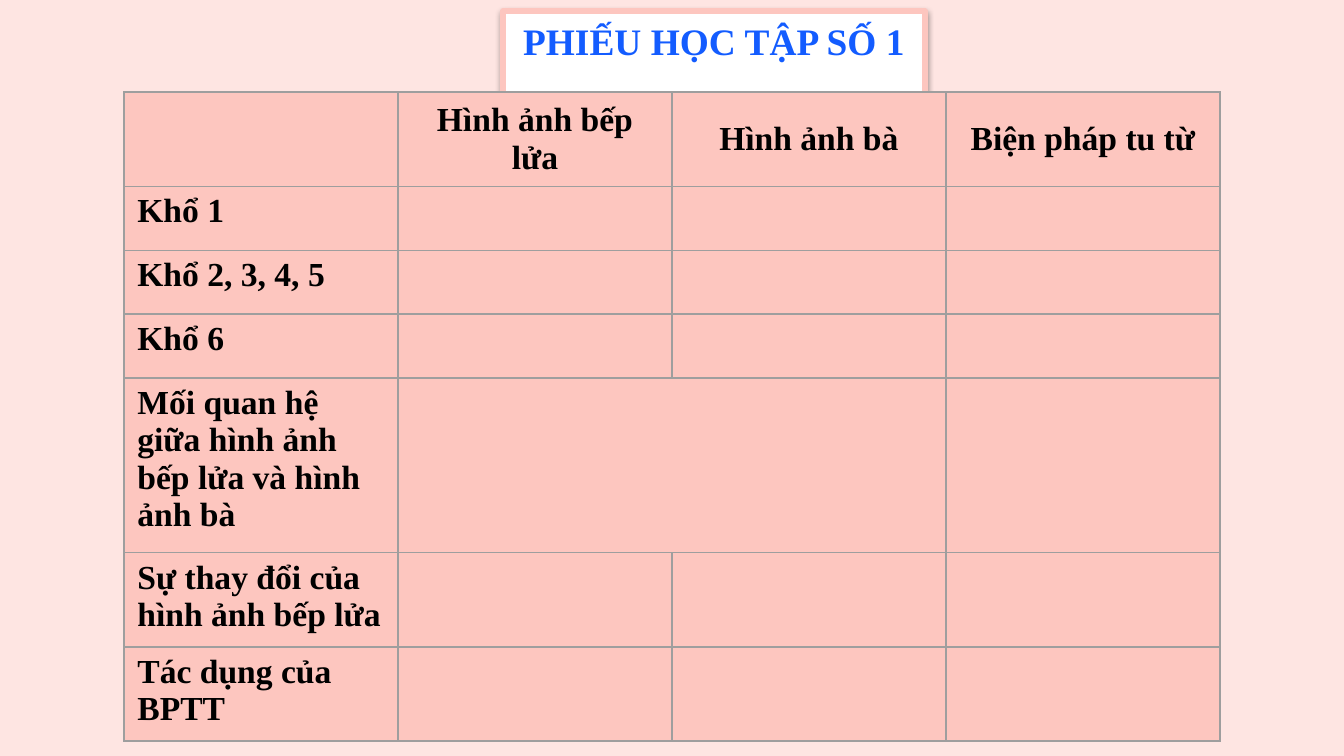
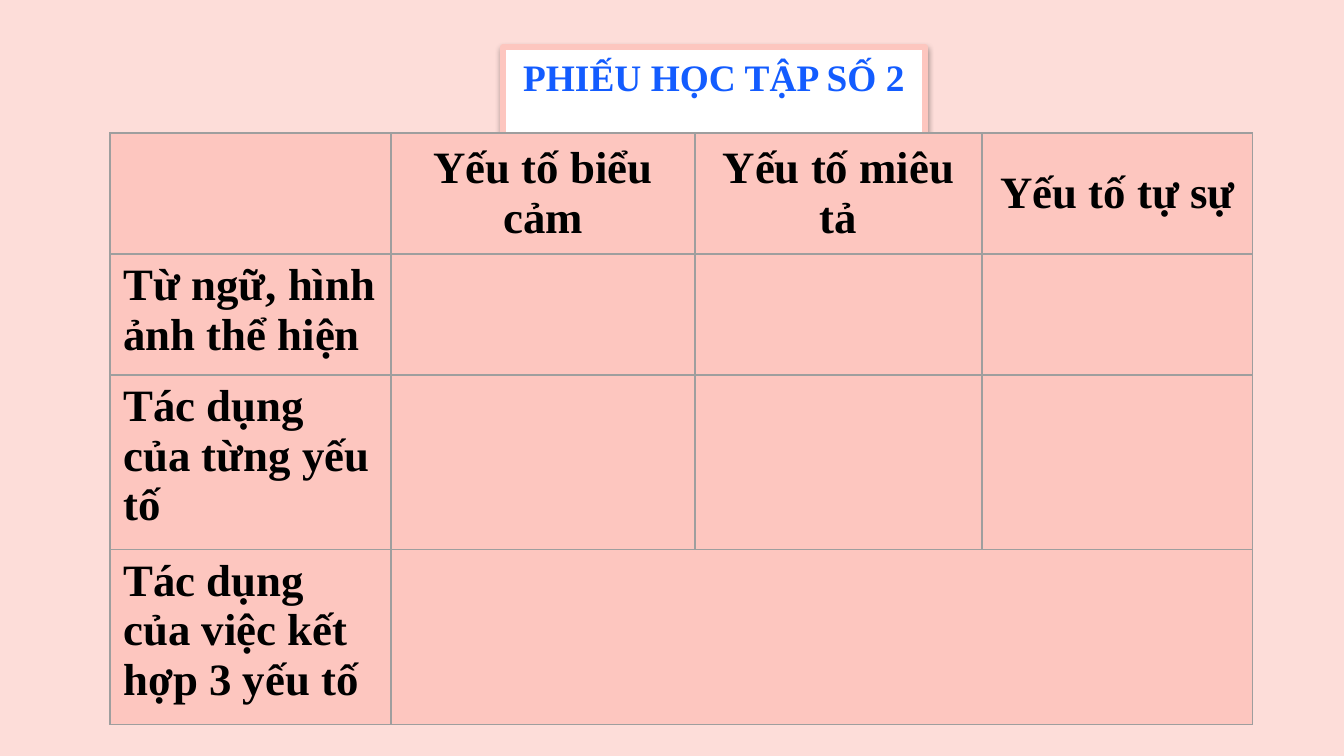
from lxml.etree import SubElement
from pptx import Presentation
from pptx.dml.color import RGBColor
from pptx.enum.text import MSO_ANCHOR, MSO_AUTO_SIZE, PP_ALIGN
from pptx.oxml.ns import qn
from pptx.util import Emu, Pt

EMU_PER_INCH = 914400
PX_PER_INCH = 134.4
FONT = "Times New Roman"
COLORS = {
    "pink": "FDC6BF",
    "white": "FFFFFF",
    "title": "135CFF",
    "text": "000000",
    "border": "9E9E9E",
    "shadow": "000000",
}
TITLE_LAYOUT = 5


def px(length):
    return Emu(round(length * EMU_PER_INCH / PX_PER_INCH))


def color(name):
    return RGBColor.from_string(COLORS[name])


def add_alpha(color_element, percent):
    SubElement(color_element, qn("a:alpha"), val=str(percent * 1000))


def write(para, text, size, color_name):
    span = para.add_run()
    span.text = text
    span.font.name = FONT
    span.font.size = Pt(size)
    span.font.bold = True
    span.font.color.rgb = color(color_name)


# Page with a tinted background
def add_page(deck, tint):
    page = deck.slides.add_slide(deck.slide_layouts[TITLE_LAYOUT])
    fill = page.background.fill
    fill.solid()
    fill.fore_color.rgb = color("pink")
    background = page.element.find(".//" + qn("p:bg"))
    add_alpha(background.find(".//" + qn("a:srgbClr")), tint)
    return page


# Framed title with a soft shadow below
def add_shadow(box):
    effects = SubElement(box.element.spPr, qn("a:effectLst"))
    shadow = SubElement(effects, qn("a:outerShdw"), blurRad=str(Pt(3.1)),
                        dist=str(Pt(1.6)), dir="5400000", rotWithShape="0")
    add_alpha(SubElement(shadow, qn("a:srgbClr"), val=COLORS["shadow"]), 38)


def set_title(page, text, top):
    box = page.shapes.title
    box.left, box.top, box.width, box.height = map(px, (503, top, 422, 59))
    box.fill.solid()
    box.fill.fore_color.rgb = color("white")
    box.line.color.rgb = color("pink")
    box.line.width = Pt(3)
    add_shadow(box)
    frame = box.text_frame
    frame.word_wrap = True
    frame.auto_size = MSO_AUTO_SIZE.SHAPE_TO_FIT_TEXT
    frame.vertical_anchor = MSO_ANCHOR.TOP
    para = frame.paragraphs[0]
    para.alignment = PP_ALIGN.CENTER
    write(para, text, 20, "title")


# Worksheet table: headings across the top, labels down the left
def style_cell(cell):
    properties = cell._tc.get_or_add_tcPr()
    for side in ("lnL", "lnR", "lnT", "lnB"):
        line = SubElement(properties, qn("a:" + side), w=str(Pt(0.75)))
        solid = SubElement(line, qn("a:solidFill"))
        SubElement(solid, qn("a:srgbClr"), val=COLORS["border"])
    cell.fill.solid()
    cell.fill.fore_color.rgb = color("pink")


def add_worksheet(page, place, widths, heights, headings, labels, size, merge):
    frame = page.shapes.add_table(len(heights), len(widths), *map(px, place))
    table = frame.table
    table.first_row = False
    table.horz_banding = False
    for column, width in zip(table.columns, widths):
        column.width = px(width)
    for row, height in zip(table.rows, heights):
        row.height = px(height)
    frame.height = px(place[3])
    for cell in table.iter_cells():
        style_cell(cell)
    for index, heading in enumerate(headings, 1):
        cell = table.cell(0, index)
        cell.vertical_anchor = MSO_ANCHOR.MIDDLE
        para = cell.text_frame.paragraphs[0]
        para.alignment = PP_ALIGN.CENTER
        write(para, heading, size, "text")
    for index, label in enumerate(labels, 1):
        para = table.cell(index, 0).text_frame.paragraphs[0]
        write(para, label, size, "text")
    row, first, last = merge
    table.cell(row, first).merge(table.cell(row, last))


def add_imagery_page(deck):
    page = add_page(deck, 44)
    set_title(page, "PHIẾU HỌC TẬP SỐ 1", 11)
    add_worksheet(
        page, (124, 92, 1096, 652),
        widths=[274] * 4,
        heights=[64] * 4 + [128, 90, 64],
        headings=["Hình ảnh bếp lửa", "Hình ảnh bà", "Biện pháp tu từ"],
        labels=["Khổ 1", "Khổ 2, 3, 4, 5", "Khổ 6",
                "Mối quan hệ giữa hình ảnh bếp lửa và hình ảnh bà",
                "Sự thay đổi của hình ảnh bếp lửa",
                "Tác dụng của BPTT"],
        size=18, merge=(4, 1, 2))


def add_elements_page(deck):
    page = add_page(deck, 58)
    set_title(page, "PHIẾU HỌC TẬP SỐ 2", 47)
    add_worksheet(
        page, (110, 133, 1143, 591),
        widths=[281, 304, 287, 271],
        heights=[70, 114, 114, 164],
        headings=["Yếu tố biểu cảm", "Yếu tố miêu tả", "Yếu tố tự sự"],
        labels=["Từ ngữ, hình ảnh thể hiện",
                "Tác dụng của từng yếu tố",
                "Tác dụng của việc kết hợp 3 yếu tố"],
        size=24, merge=(3, 1, 3))


def main():
    deck = Presentation()
    deck.slide_width, deck.slide_height = px(1344), px(756)
    add_imagery_page(deck)
    add_elements_page(deck)
    deck.save("out.pptx")


if __name__ == "__main__":
    main()
